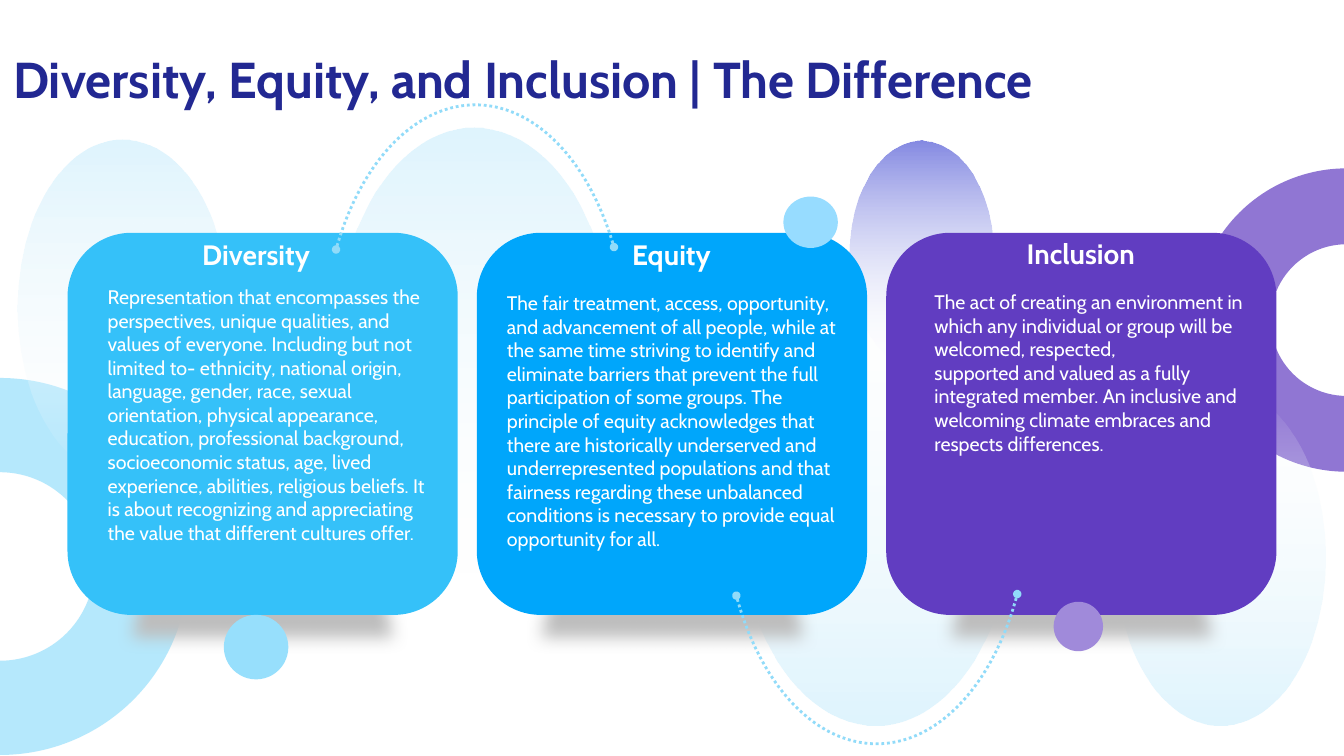
"""Build a slide that sets out the difference between diversity, equity and inclusion."""
from lxml import etree
from pptx import Presentation
from pptx.dml.color import RGBColor
from pptx.enum.dml import MSO_LINE
from pptx.enum.shapes import MSO_SHAPE
from pptx.enum.text import MSO_ANCHOR, MSO_AUTO_SIZE, PP_ALIGN
from pptx.oxml.ns import qn
from pptx.util import Inches, Pt

ARC, BLOCK_ARC, ELLIPSE = MSO_SHAPE.ARC, MSO_SHAPE.BLOCK_ARC, MSO_SHAPE.OVAL
ROUNDED, TRAPEZOID = MSO_SHAPE.ROUNDED_RECTANGLE, MSO_SHAPE.TRAPEZOID
DOTTED = MSO_LINE.ROUND_DOT
MIDDLE, TOP = MSO_ANCHOR.MIDDLE, MSO_ANCHOR.TOP
FIT_SHAPE, NO_FIT = MSO_AUTO_SIZE.SHAPE_TO_FIT_TEXT, MSO_AUTO_SIZE.NONE
CENTER, LEFT = PP_ALIGN.CENTER, PP_ALIGN.LEFT

FONT = "Cabin"
WHITE = RGBColor(0xFF, 0xFF, 0xFF)
NAVY = RGBColor(0x22, 0x28, 0x92)
SKY = RGBColor(0x35, 0xC1, 0xF9)
BLUE = RGBColor(0x00, 0xA6, 0xFB)
PURPLE = RGBColor(0x61, 0x3D, 0xC1)
LILAC = RGBColor(0xA0, 0x8A, 0xDA)
PERIWINKLE = RGBColor(0x85, 0x8A, 0xE3)
PALE_BLUE = RGBColor(0x97, 0xDF, 0xFC)
BRIGHT_PALE_BLUE = RGBColor(0x97, 0xDC, 0xFF)
ICE = RGBColor(0xE0, 0xF5, 0xFE)
NEAR_WHITE = RGBColor(0xFA, 0xFD, 0xFF)
DOT_BLUE = RGBColor(0x91, 0xDB, 0xF9)
GREY = RGBColor(0xBF, 0xBF, 0xBF)
SLATE = RGBColor(0x42, 0x62, 0x6E)

CARD_LEFT, CARD_PITCH = 0.67, 4.06
CARDS = [
    ("Diversity", SKY, (1.84, 2.37), (0.97, 2.78, 3.36, 2.93), [
        "Representation that encompasses the perspectives, unique qualities, and values of "
        "everyone. Including but not limited to- ethnicity, national origin, language, gender, "
        "race, sexual orientation, physical appearance, education, professional background, "
        "socioeconomic status, age, lived experience, abilities, religious beliefs. It is about "
        "recognizing and appreciating the value that different cultures offer."]),
    ("Equity", BLUE, (5.96, 2.37), (4.93, 2.84, 3.6, 2.69), [
        "The fair treatment, access, opportunity, and advancement of all people, while at the "
        "same time striving to identify and eliminate barriers that prevent the full "
        "participation of some groups. The principle of equity acknowledges that there are "
        "historically underserved and underrepresented populations and that fairness regarding "
        "these unbalanced conditions is necessary to provide equal opportunity for all."]),
    ("Inclusion", PURPLE, (10.02, 2.36), (9.17, 2.83, 3.36, 1.75), [
        "The act of creating an environment in which any individual or group will be welcomed, "
        "respected,",
        "supported and valued as a fully integrated member. An inclusive and welcoming climate "
        "embraces and respects differences."]),
]


def add_plain(slide, kind, box, color=None, rotation=0, flipped=False):
    """Add a shape without outline or shadow, filled when a colour is given."""
    shape = slide.shapes.add_shape(kind, *map(Inches, box))
    shape.shadow.inherit = False
    shape.line.fill.background()
    if color is None:
        shape.fill.background()
    else:
        shape.fill.solid()
        shape.fill.fore_color.rgb = color
    shape.rotation = rotation
    if flipped:
        shape.element.spPr.find(qn("a:xfrm")).set("flipV", "1")
    return shape


def set_alpha(shape, percent):
    """Set the opacity of the first colour in the fill of a shape."""
    color = next(shape.element.spPr.iter(qn("a:srgbClr")))
    etree.SubElement(color, qn("a:alpha")).set("val", str(percent * 1000))


def add_half_ring(slide, box, color, rotation):
    """Add a translucent half ring."""
    set_alpha(add_plain(slide, BLOCK_ARC, box, color, rotation), 70)


def add_fading_oval(slide, box, color, rotation=0, flipped=False):
    """Add an oval that fades from a colour to transparent."""
    oval = add_plain(slide, ELLIPSE, box, rotation=rotation, flipped=flipped)
    oval.fill.gradient()
    oval.fill.gradient_angle = 90
    for stop, stop_color in zip(oval.fill.gradient_stops, (NEAR_WHITE, color)):
        stop.color.rgb = stop_color
    set_alpha(oval, 0)


def add_dotted_arc(slide, box, angles, flipped=False):
    """Add a dotted arc with a round dot at each end."""
    arc = add_plain(slide, ARC, box, flipped=flipped)
    arc.adjustments[0], arc.adjustments[1] = angles
    arc.line.color.rgb = DOT_BLUE
    arc.line.width = Pt(2)
    arc.line.dash_style = DOTTED
    line = arc.element.spPr.find(qn("a:ln"))
    for end in ("a:headEnd", "a:tailEnd"):
        etree.SubElement(line, qn(end)).set("type", "oval")


def add_soft_shadow(slide, left):
    """Add a blurred trapezoid under a card."""
    shadow = add_plain(slide, TRAPEZOID, (left, 5.72, 3.07, 0.76), GREY)
    shadow.line.color.rgb = SLATE
    shadow.line.width = Pt(2)
    effects = shadow.element.spPr.find(qn("a:effectLst"))
    etree.SubElement(effects, qn("a:softEdge")).set("rad", str(Pt(12.5)))


def add_text(slide, box, texts, size, color=WHITE, bold=False, align=LEFT, spacing=None,
             anchor=TOP, fit=FIT_SHAPE, side_inset=0.1, end_inset=0.05):
    """Add a wrapped text box with one paragraph for each text."""
    frame = slide.shapes.add_textbox(*map(Inches, box)).text_frame
    frame.word_wrap = True
    frame.auto_size = fit
    frame.vertical_anchor = anchor
    frame.margin_left = frame.margin_right = Inches(side_inset)
    frame.margin_top = frame.margin_bottom = Inches(end_inset)
    frame.text = "\n".join(texts)
    for paragraph in frame.paragraphs:
        paragraph.alignment = align
        paragraph.line_spacing = spacing
        paragraph.font.name = FONT
        paragraph.font.size = Pt(size)
        paragraph.font.bold = bold
        paragraph.font.color.rgb = color


def add_card(slide, left, heading, color, heading_place, body_box, texts):
    """Add a rounded card with its shadow, heading and definition."""
    add_soft_shadow(slide, left + 0.4)
    add_plain(slide, ROUNDED, (left, 2.31, 3.87, 3.79), color)
    add_text(slide, (*heading_place, 1.4, 0.37), [heading], 20, bold=True, align=CENTER,
             spacing=0.8)
    add_text(slide, body_box, texts, 14)


def main():
    """Build and save the slide."""
    presentation = Presentation()
    presentation.slide_width = Inches(13.33)
    presentation.slide_height = Inches(7.5)
    slide = presentation.slides.add_slide(presentation.slide_layouts[6])

    add_half_ring(slide, (-1.87, 3.75, 3.74, 3.74), PALE_BLUE, 90)
    add_half_ring(slide, (11.85, 1.67, 3.01, 3.01), PURPLE, 270)
    add_text(slide, (0.13, 0.11, 11.58, 1.42),
             ["Diversity, Equity, and Inclusion | The Difference"], 36, NAVY, True,
             spacing=0.9, anchor=MIDDLE, fit=NO_FIT, side_inset=0, end_inset=0.07)

    add_fading_oval(slide, (8.43, 1.39, 1.42, 2.28), PERIWINKLE)
    add_fading_oval(slide, (11.06, 3.85, 2.09, 3.35), ICE, flipped=True)
    add_fading_oval(slide, (0.17, 1.38, 2.09, 3.35), ICE)
    add_fading_oval(slide, (7.3, 2.77, 2.76, 4.43), ICE, rotation=180)
    add_fading_oval(slide, (3.32, 1.27, 2.76, 4.43), ICE)

    for index, card in enumerate(CARDS):
        add_card(slide, CARD_LEFT + index * CARD_PITCH, *card)

    add_dotted_arc(slide, (3.2, 1.04, 3.03, 4.87), (129.53, 194.0))
    add_dotted_arc(slide, (7.18, 2.51, 3.03, 4.87), (128.84, 195.46), flipped=True)
    add_plain(slide, ELLIPSE, (2.22, 6.1, 0.64, 0.64), PALE_BLUE)
    add_plain(slide, ELLIPSE, (10.45, 5.97, 0.49, 0.49), LILAC)
    add_plain(slide, ELLIPSE, (7.77, 1.95, 0.54, 0.51), BRIGHT_PALE_BLUE)
    presentation.save("out.pptx")


if __name__ == "__main__":
    main()
